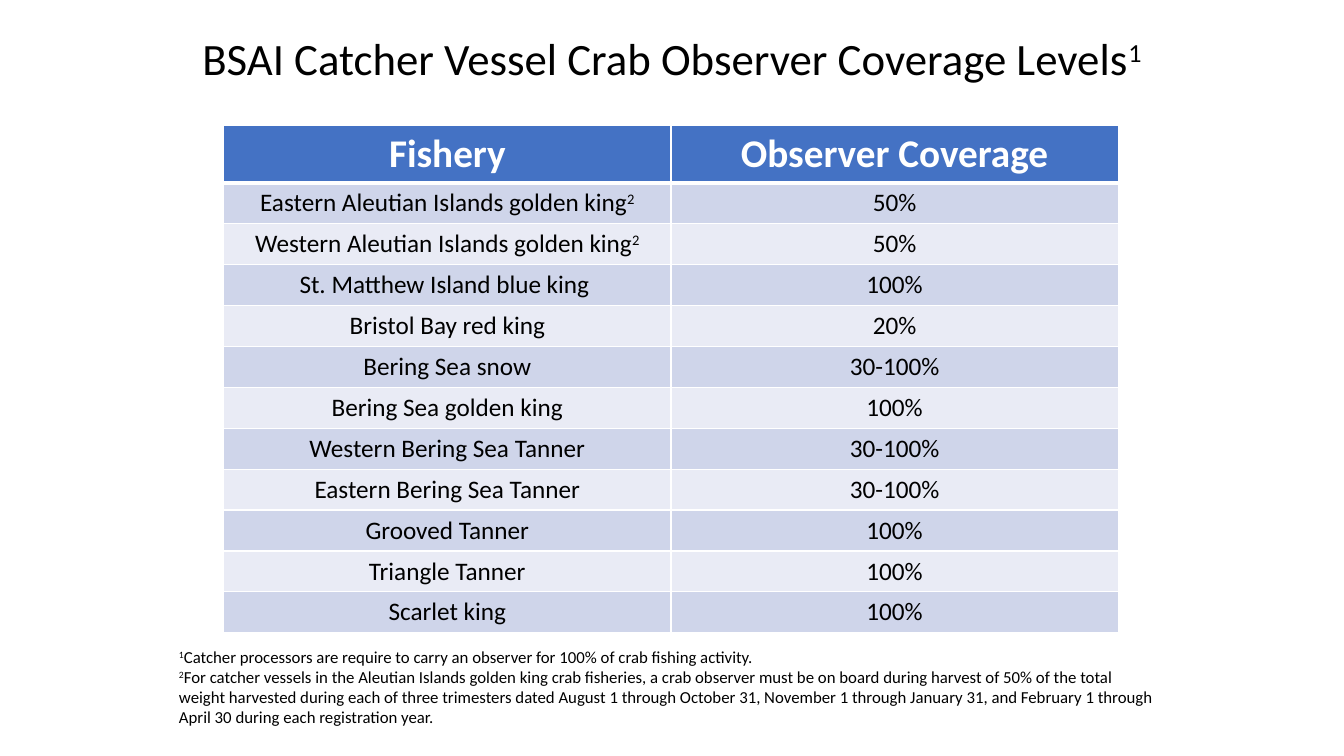
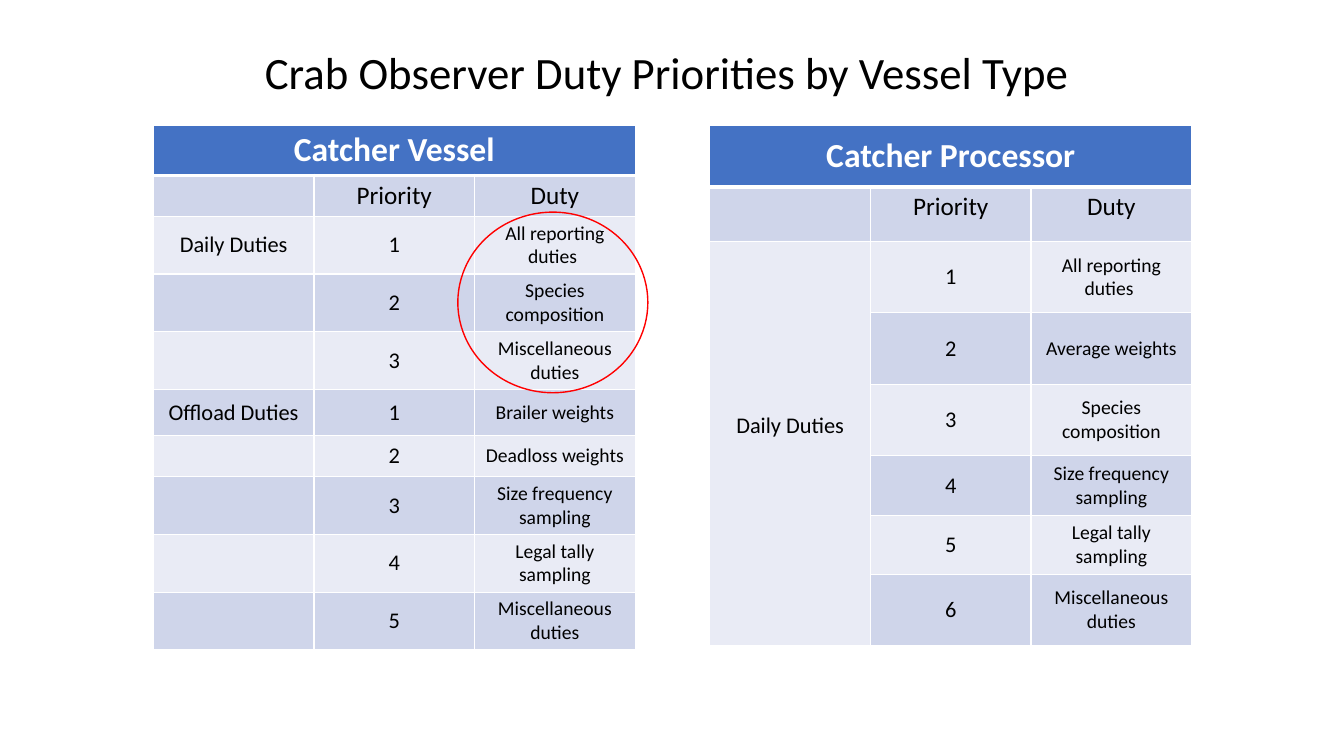
from lxml import etree
from pptx import Presentation
from pptx.dml.color import RGBColor
from pptx.enum.shapes import MSO_SHAPE
from pptx.enum.text import MSO_ANCHOR as ANCHOR, PP_ALIGN as ALIGN
from pptx.oxml.ns import qn
from pptx.util import Pt

# Shared look
EMU_PER_PX = 9525
FONT = "Calibri"
BLACK, WHITE, RED = "000000", "FFFFFF", "FF0000"
HEADER_FILL = "4472C4"
BAND_FILLS = ("E9EBF5", "CFD5EA")
TABLE_TOP = 119

# Slide content; text between carets is superscript
COVERAGE = [
    ("Eastern Aleutian Islands golden king^2^", "50%"),
    ("Western Aleutian Islands golden king^2^", "50%"),
    ("St. Matthew Island blue king ", "100%"),
    ("Bristol Bay red king", "20%"),
    ("Bering Sea snow", "30-100%"),
    ("Bering Sea golden king", "100%"),
    ("Western Bering Sea Tanner", "30-100%"),
    ("Eastern Bering Sea Tanner", "30-100%"),
    ("Grooved Tanner", "100%"),
    ("Triangle Tanner", "100%"),
    ("Scarlet king", "100%"),
]
FOOTNOTES = [
    "^1^Catcher processors are require to carry an observer for 100% of crab "
    "fishing activity.",
    "^2^For catcher vessels in the Aleutian Islands golden king crab fisheries, "
    "a crab observer must be on board during harvest of 50% of the total weight "
    "harvested during each of three trimesters dated August 1 through October 31, "
    "November 1 through January 31, and February 1 through April 30 during each "
    "registration year.",
]
VESSEL_DUTIES = [
    ("Daily Duties", ["All reporting duties ", "Species composition",
                      "Miscellaneous duties"]),
    ("Offload Duties", ["Brailer weights", "Deadloss weights",
                        "Size frequency sampling", "Legal tally sampling",
                        "Miscellaneous duties"]),
]
PROCESSOR_DUTIES = [
    ("Daily Duties", ["All reporting duties ", "Average weights",
                      "Species composition", "Size frequency sampling",
                      "Legal tally sampling", "Miscellaneous duties"]),
]


def px(*lengths):
    return [length * EMU_PER_PX for length in lengths]


def color(hex_code):
    return RGBColor.from_string(hex_code)


def add_runs(paragraph, text, size, text_color=BLACK, bold=False):
    for index, piece in enumerate(text.split("^")):
        if not piece:
            continue
        run = paragraph.add_run()
        run.text = piece
        font = run.font
        font.name, font.size, font.bold = FONT, Pt(size), bold
        font.color.rgb = color(text_color)
        if index % 2:
            font._element.set("baseline", "30000")


def add_text_box(slide, box, texts, size, align=ALIGN.LEFT, anchor=ANCHOR.TOP,
                 line_spacing=1.0):
    frame = slide.shapes.add_textbox(*px(*box)).text_frame
    frame.word_wrap = True
    frame.vertical_anchor = anchor
    for index, text in enumerate(texts):
        paragraph = frame.add_paragraph() if index else frame.paragraphs[0]
        paragraph.alignment = align
        paragraph.line_spacing = line_spacing
        add_runs(paragraph, text, size)


def add_title(slide, text, top):
    add_text_box(slide, (88, top, 1104, 87), [text], 32, ALIGN.CENTER,
                 ANCHOR.MIDDLE, 0.9)


def set_borders(cell, top=1, bottom=1):
    properties = cell._tc.get_or_add_tcPr()
    widths = {"a:lnL": 1, "a:lnR": 1, "a:lnT": top, "a:lnB": bottom}
    # Borders must precede the fill
    for index, (tag, width) in enumerate(widths.items()):
        line = etree.Element(qn(tag), w=str(Pt(width)))
        fill = etree.SubElement(line, qn("a:solidFill"))
        etree.SubElement(fill, qn("a:srgbClr"), val=WHITE)
        properties.insert(index, line)


def add_banded_table(slide, left, column_width, row_heights, rows, header_size,
                     body_sizes):
    columns = len(rows[0])
    frame = slide.shapes.add_table(
        len(rows), columns,
        *px(left, TABLE_TOP, column_width * columns, sum(row_heights)))
    table = frame.table
    table.first_row = table.horz_banding = False
    for column in table.columns:
        column.width = px(column_width)[0]
    for row_index, texts in enumerate(rows):
        table.rows[row_index].height = px(row_heights[row_index])[0]
        is_header = row_index == 0
        for column_index, text in enumerate(texts):
            cell = table.cell(row_index, column_index)
            cell.fill.solid()
            cell.fill.fore_color.rgb = color(
                HEADER_FILL if is_header else BAND_FILLS[row_index % 2])
            set_borders(cell, top=3 if row_index == 1 else 1,
                        bottom=3 if is_header else 1)
            cell.vertical_anchor = ANCHOR.MIDDLE
            paragraph = cell.text_frame.paragraphs[0]
            paragraph.alignment = ALIGN.CENTER
            if is_header:
                add_runs(paragraph, text, header_size, WHITE, True)
            else:
                add_runs(paragraph, text, body_sizes(row_index, column_index))
    return table


def duty_size(row_index, column_index):
    return 18 if row_index == 1 else (16, 16, 14)[column_index]


def add_duty_table(slide, left, row_heights, vessel_type, groups):
    rows = [(vessel_type, "", ""), ("", "Priority", "Duty")]
    for group, duties in groups:
        for priority, duty in enumerate(duties, 1):
            rows.append((group if priority == 1 else "", str(priority), duty))
    table = add_banded_table(slide, left, 153, row_heights, rows, 24, duty_size)
    table.cell(0, 0).merge(table.cell(0, 2))
    for column_index in range(3):
        table.cell(1, column_index).vertical_anchor = ANCHOR.TOP
    return table


def add_highlight(slide, box):
    shape = slide.shapes.add_shape(MSO_SHAPE.OVAL, *px(*box))
    shape.shadow.inherit = False
    shape.fill.background()
    shape.line.color.rgb = color(RED)
    shape.line.width = Pt(1)


def build_coverage_slide(slide):
    add_title(slide, "BSAI Catcher Vessel Crab Observer Coverage Levels^1^", 15)
    rows = [("Fishery", "Observer Coverage")] + COVERAGE
    add_banded_table(slide, 213, 426, [55] + [39] * len(COVERAGE), rows, 28,
                     lambda row_index, column_index: 18)
    add_text_box(slide, (161, 611, 951, 107), FOOTNOTES, 12)


def build_duties_slide(slide):
    add_title(slide, "Crab Observer Duty Priorities by Vessel Type ", 28)
    add_duty_table(slide, 146, [48, 39, 55, 55, 55, 44, 39, 55, 55, 55],
                   "Catcher Vessel", VESSEL_DUTIES)
    processor = add_duty_table(slide, 676, [59, 52, 68, 68, 68, 57, 56, 68],
                               "Catcher Processor", PROCESSOR_DUTIES)
    # One group label spans all rows, slightly above the middle
    label = processor.cell(2, 0)
    label.merge(processor.cell(7, 0))
    label.margin_bottom = px(39)[0]
    add_highlight(slide, (436, 202, 181, 172))


def main():
    presentation = Presentation()
    presentation.slide_width, presentation.slide_height = px(1280, 720)
    blank = presentation.slide_layouts[6]
    for build in (build_coverage_slide, build_duties_slide):
        build(presentation.slides.add_slide(blank))
    presentation.save("out.pptx")


if __name__ == "__main__":
    main()
